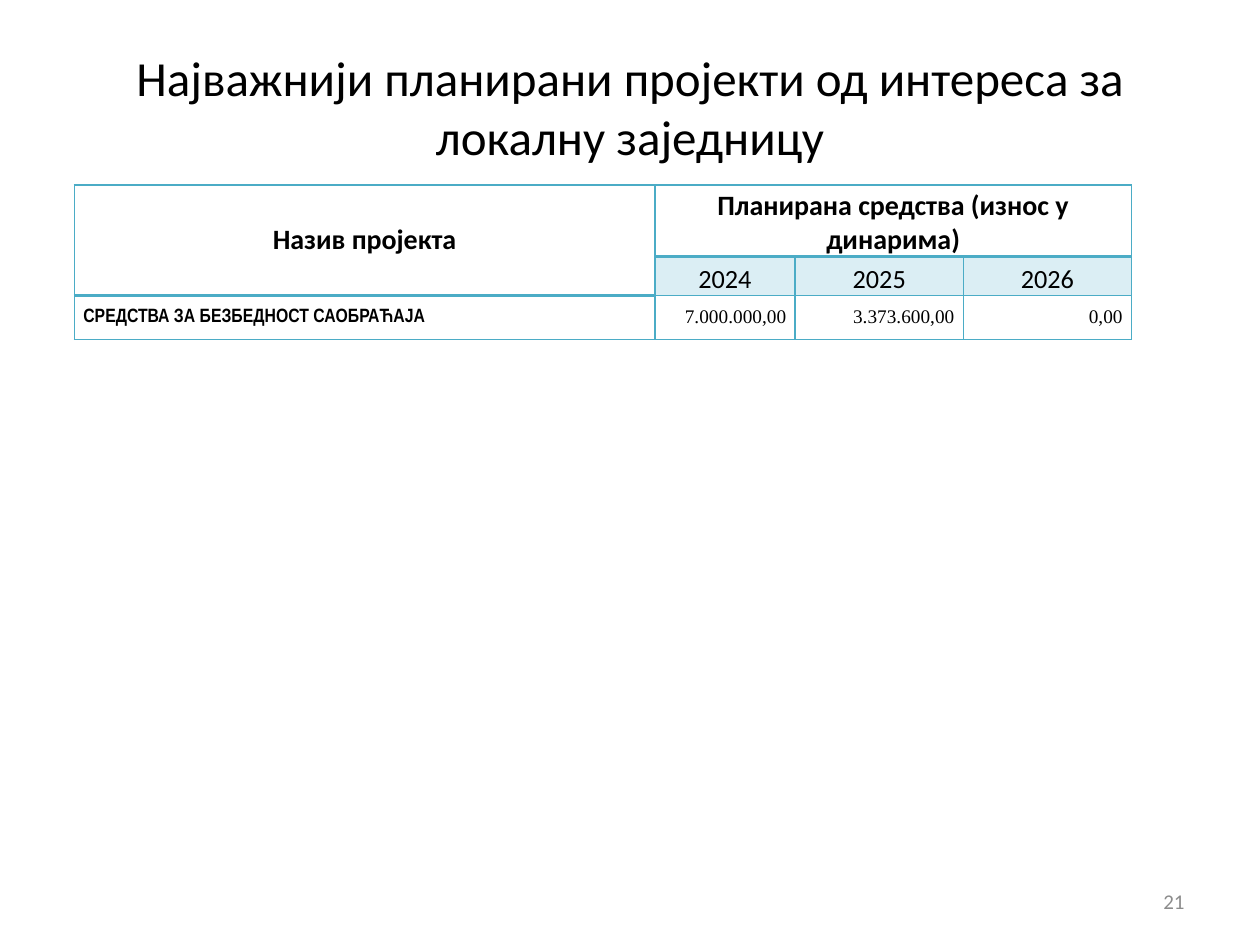
from lxml import etree
from pptx import Presentation
from pptx.dml.color import RGBColor
from pptx.enum import text
from pptx.oxml import ns
from pptx.util import Cm, Pt

TITLE = "Најважнији планирани пројекти од интереса за локалну заједницу"
PAGE = "21"
COLORS = {"text": "000000", "page": "8C8C8C", "border": "4BACC6",
          "year": "DBEEF4"}

LEFT, CENTER, RIGHT = (text.PP_ALIGN.LEFT, text.PP_ALIGN.CENTER,
                       text.PP_ALIGN.RIGHT)
MIDDLE, BOTTOM = text.MSO_ANCHOR.MIDDLE, text.MSO_ANCHOR.BOTTOM

# Cell styles: font, size, bold, alignment, anchor, fill
STYLES = {
    "name_head": ("Calibri", 16, True, CENTER, MIDDLE, None),
    "funds_head": ("Calibri", 16, True, CENTER, BOTTOM, None),
    "year": ("Calibri", 15, False, CENTER, BOTTOM, "year"),
    "project": ("Arial Narrow", 11, True, LEFT, MIDDLE, None),
    "amount": ("Times New Roman", 11, False, RIGHT, MIDDLE, None),
}
ROWS = [
    [("Назив пројекта", "name_head"),
     ("Планирана средства (износ у динарима)", "funds_head"),
     ("", "funds_head"), ("", "funds_head")],
    [("", "name_head"), ("2024", "year"), ("2025", "year"), ("2026", "year")],
    [("СРЕДСТВА ЗА БЕЗБЕДНОСТ САОБРАЋАЈА", "project"),
     ("7.000.000,00", "amount"), ("3.373.600,00", "amount"),
     ("0,00", "amount")],
]
MERGES = [((0, 0), (1, 0)), ((0, 1), (0, 3))]
HEAVY_BOTTOM = {(0, 0), (1, 0), (0, 1), (0, 2), (0, 3)}
COL_WIDTHS = [11.7, 2.83, 3.39, 3.39]
ROW_HEIGHTS = [1.45, 0.78, 0.88]


def rgb(name):
    return RGBColor.from_string(COLORS[name])


def style_text(p, font, size, bold, align, color="text"):
    p.alignment = align
    p.font.name, p.font.size, p.font.bold = font, Pt(size), bold
    p.font.color.rgb = rgb(color)


def set_borders(cell, bottom):
    """Draw 1 pt lines round a cell, with its own width at the bottom."""
    props = cell._tc.get_or_add_tcPr()
    for i, (side, width) in enumerate(
            [("lnL", 1), ("lnR", 1), ("lnT", 1), ("lnB", bottom)]):
        line = etree.Element(ns.qn("a:" + side), w=str(Pt(width)))
        fill = etree.SubElement(line, ns.qn("a:solidFill"))
        etree.SubElement(fill, ns.qn("a:srgbClr"), val=COLORS["border"])
        props.insert(i, line)


def fill_cell(cell, words, style, bottom):
    font, size, bold, align, anchor, fill = STYLES[style]
    cell.text = words
    cell.vertical_anchor = anchor
    cell.margin_left = cell.margin_right = Cm(0.18)
    cell.margin_top = cell.margin_bottom = 0
    style_text(cell.text_frame.paragraphs[0], font, size, bold, align)
    if fill:
        cell.fill.solid()
        cell.fill.fore_color.rgb = rgb(fill)
    else:
        cell.fill.background()
    set_borders(cell, bottom)


def add_projects_table(s):
    table = s.shapes.add_table(
        len(ROWS), len(COL_WIDTHS), Cm(1.5), Cm(3.73),
        Cm(sum(COL_WIDTHS)), Cm(sum(ROW_HEIGHTS))).table
    table.first_row = table.horz_banding = False
    for col, width in zip(table.columns, COL_WIDTHS):
        col.width = Cm(width)
    for row, height in zip(table.rows, ROW_HEIGHTS):
        row.height = Cm(height)
    for r, row in enumerate(ROWS):
        for c, (words, style) in enumerate(row):
            bottom = 2 if (r, c) in HEAVY_BOTTOM else 1
            fill_cell(table.cell(r, c), words, style, bottom)
    for first, last in MERGES:
        table.cell(*first).merge(table.cell(*last))


def main():
    prs = Presentation()
    prs.slide_width, prs.slide_height = Cm(25.4), Cm(19.05)
    s = prs.slides.add_slide(prs.slide_layouts[5])

    title = s.shapes.title
    title.left, title.top = Cm(1.27), Cm(0.76)
    title.width, title.height = Cm(22.86), Cm(2.77)
    title.text_frame.text = TITLE
    title.text_frame.vertical_anchor = MIDDLE
    style_text(title.text_frame.paragraphs[0], "Calibri", 28, False, CENTER)

    add_projects_table(s)

    page = s.shapes.add_textbox(Cm(18.2), Cm(17.66), Cm(5.93), Cm(1.01))
    tf = page.text_frame
    tf.word_wrap = True
    tf.vertical_anchor = MIDDLE
    tf.text = PAGE
    style_text(tf.paragraphs[0], "Calibri", 12, False, RIGHT, "page")

    prs.save("out.pptx")


if __name__ == "__main__":
    main()
